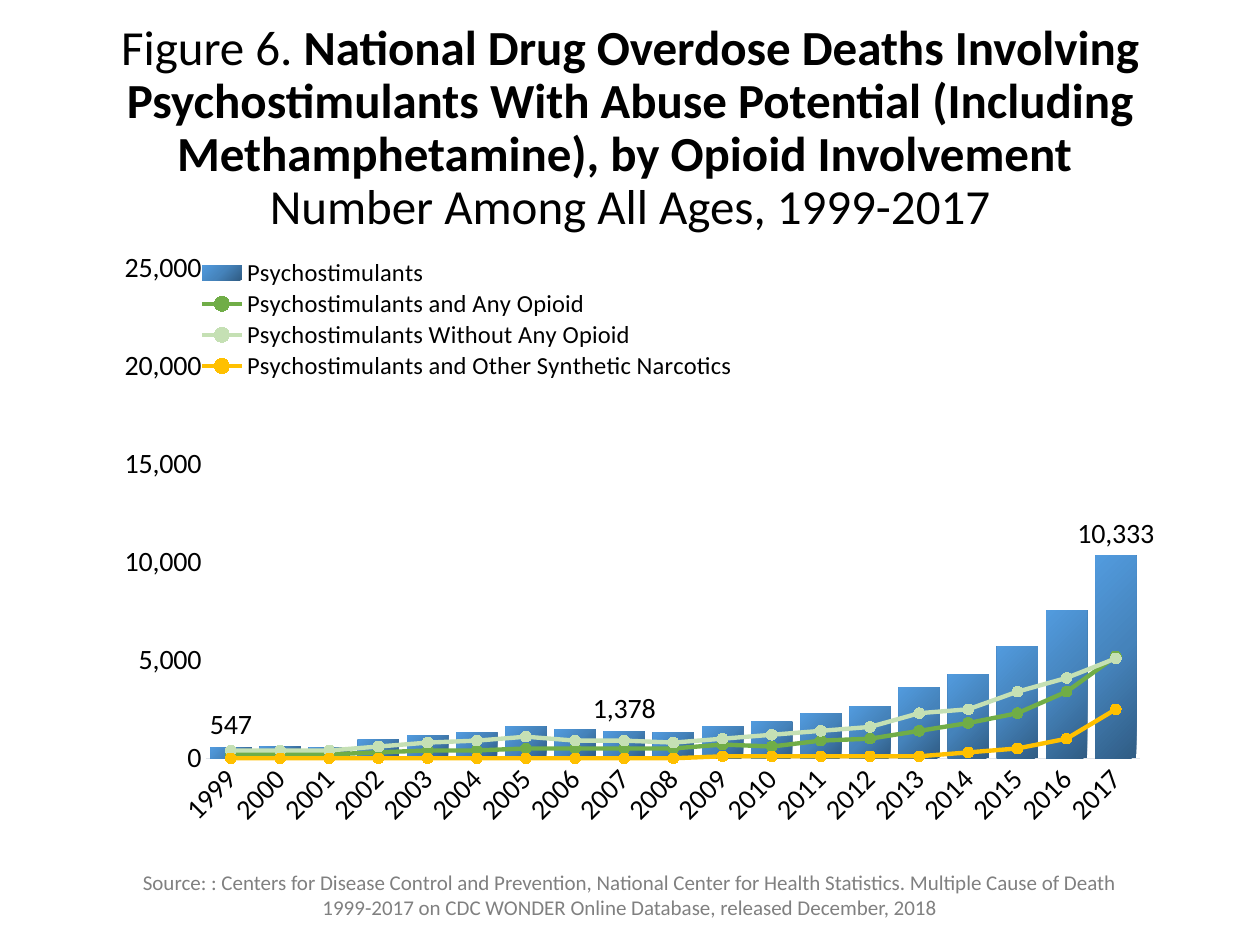
from copy import deepcopy

from lxml import etree
from pptx import Presentation
from pptx.chart.data import CategoryChartData
from pptx.dml.color import RGBColor
from pptx.enum.chart import (XL_CHART_TYPE, XL_LABEL_POSITION, XL_LEGEND_POSITION,
                             XL_MARKER_STYLE, XL_TICK_MARK)
from pptx.enum.text import MSO_ANCHOR, MSO_AUTO_SIZE, PP_ALIGN
from pptx.oxml.ns import qn
from pptx.oxml.xmlchemy import OxmlElement
from pptx.util import Inches, Pt

COLUMN = XL_CHART_TYPE.COLUMN_CLUSTERED
ABOVE = XL_LABEL_POSITION.OUTSIDE_END
BOTTOM = XL_LEGEND_POSITION.BOTTOM
CIRCLE = XL_MARKER_STYLE.CIRCLE
NO_TICK = XL_TICK_MARK.NONE
MIDDLE = MSO_ANCHOR.MIDDLE
GROW = MSO_AUTO_SIZE.SHAPE_TO_FIT_TEXT
CENTER = PP_ALIGN.CENTER

FONT = "Calibri"
YEARS = [str(year) for year in range(1999, 2018)]
TOTAL = [547, 578, 563, 941, 1179, 1305, 1608, 1462, 1378, 1302,
         1632, 1854, 2266, 2635, 3627, 4298, 5716, 7542, 10333]
LINES = [
    ("Psychostimulants and Any Opioid", "70AD47",
     [200, 200, 200, 300, 400, 400, 500, 500, 500, 500,
      700, 600, 900, 1000, 1400, 1800, 2300, 3400, 5200]),
    ("Psychostimulants Without Any Opioid", "C5E0B4",
     [400, 400, 400, 600, 800, 900, 1100, 900, 900, 800,
      1000, 1200, 1400, 1600, 2300, 2500, 3400, 4100, 5100]),
    ("Psychostimulants and Other Synthetic Narcotics", "FFC000",
     [0] * 10 + [100] * 5 + [300, 500, 1000, 2500]),
]


def style(font, size, color="000000", bold=False):
    font.name, font.size, font.bold = FONT, Pt(size), bold
    font.color.rgb = RGBColor.from_string(color)


def layout(parent, index, box, inner=False):
    """Give a chart part a manual layout, as fractions of the chart."""
    for old in parent.findall(qn("c:layout")):
        parent.remove(old)
    frame = OxmlElement("c:layout")
    manual = etree.SubElement(frame, qn("c:manualLayout"))
    parts = [("layoutTarget", "inner")] if inner else []
    parts += [("xMode", "edge"), ("yMode", "edge"), *zip("xywh", box)]
    for tag, value in parts:
        etree.SubElement(manual, qn("c:" + tag), val=str(value))
    parent.insert(index, frame)


deck = Presentation()
deck.slide_width, deck.slide_height = Inches(10), Inches(7.5)
slide = deck.slides.add_slide(deck.slide_layouts[5])

# Title
title = slide.shapes.title
title.left, title.top = Inches(0), Inches(0.3)
title.width, title.height = Inches(10), Inches(1.45)
title.text_frame.vertical_anchor = MIDDLE
para = title.text_frame.paragraphs[0]
para.alignment, para.line_spacing = CENTER, 0.9
run = para.add_run()
run.text = "Figure 6. "
style(run.font, 28)
run = para.add_run()
run.text = ("National Drug Overdose Deaths Involving Psychostimulants With Abuse "
            "Potential (Including Methamphetamine), by Opioid Involvement ")
style(run.font, 28, bold=True)
para.add_line_break()
run = para.add_run()
run.text = "Number Among All Ages, 1999-2017"
style(run.font, 28)

# Chart
data = CategoryChartData(number_format="#,##0")
data.categories = YEARS
data.add_series("Psychostimulants", TOTAL)
for name, _, values in LINES:
    data.add_series(name, values)
chart = slide.shapes.add_chart(COLUMN, Inches(0.69), Inches(1.99),
                               Inches(8.62), Inches(4.74), data).chart
style(chart.font, 16)
chart.has_title = False

# Move all series but the first to a line plot on the same axes
bars = chart.plots[0]
bars.gap_width, bars.vary_by_categories = 20, False
bar_xml = chart._chartSpace.find(".//" + qn("c:barChart"))
line_xml = OxmlElement("c:lineChart")
etree.SubElement(line_xml, qn("c:grouping"), val="standard")
etree.SubElement(line_xml, qn("c:varyColors"), val="0")
for ser in bar_xml.findall(qn("c:ser"))[1:]:
    for flag in ser.findall(qn("c:invertIfNegative")):
        ser.remove(flag)
    line_xml.append(ser)
etree.SubElement(line_xml, qn("c:marker"), val="1")
for axis_id in bar_xml.findall(qn("c:axId")):
    line_xml.append(deepcopy(axis_id))
bar_xml.addnext(line_xml)

total = chart.plots[0].series[0]
fill = total.format.fill
fill.gradient()
fill.gradient_angle = 135
first = next(total._element.iter(qn("a:gs")))
first.addnext(deepcopy(first))
for stop, pos, color in zip(fill.gradient_stops, (0, 0.5, 1),
                            ("305C84", "4583BB", "529BDE")):
    stop.position = pos
    stop.color.rgb = RGBColor.from_string(color)
total.data_labels.show_value = False
for year in ("1999", "2007", "2017"):
    total.points[YEARS.index(year)].data_label.position = ABOVE

for series, (_, color, _) in zip(chart.plots[1].series, LINES):
    rgb = RGBColor.from_string(color)
    series.smooth = False
    series.format.line.width = Pt(2.5)
    series.format.line.color.rgb = rgb
    mark = series.marker
    mark.style, mark.size = CIRCLE, 6
    mark.format.fill.solid()
    mark.format.fill.fore_color.rgb = rgb
    mark.format.line.color.rgb = rgb

# Axes
years, count = chart.category_axis, chart.value_axis
for axis in (years, count):
    axis.major_tick_mark = axis.minor_tick_mark = NO_TICK
    axis.has_major_gridlines = False
    style(axis.tick_labels.font, 16)
years.format.line.width = Pt(0.75)
years.format.line.color.rgb = RGBColor.from_string("E0E5EB")
years._element.find(qn("c:txPr")).find(qn("a:bodyPr")).set("rot", "-2700000")
count.format.line.fill.background()
count.minimum_scale, count.maximum_scale, count.major_unit = 0, 25000, 5000
count.tick_labels.number_format = "#,##0"
count.tick_labels.number_format_is_linked = False

# Legend
chart.has_legend = True
legend = chart.legend
legend.position = BOTTOM
legend.include_in_layout = True
style(legend.font, 14)
layout(legend._element, 1, (0.1, 0.01, 0.5, 0.21))
layout(bar_xml.getparent(), 0, (0.11, 0.03, 0.86, 0.82), inner=True)

# Source
note = slide.shapes.add_textbox(Inches(1.02), Inches(6.85), Inches(7.96), Inches(0.5))
note.text_frame.word_wrap = True
note.text_frame.auto_size = GROW
para = note.text_frame.paragraphs[0]
para.alignment = CENTER
run = para.add_run()
run.text = ("Source: : Centers for Disease Control and Prevention, National Center for "
            "Health Statistics. Multiple Cause of Death 1999-2017 on CDC WONDER Online "
            "Database, released December, 2018")
style(run.font, 12, "808080")

deck.save("out.pptx")
